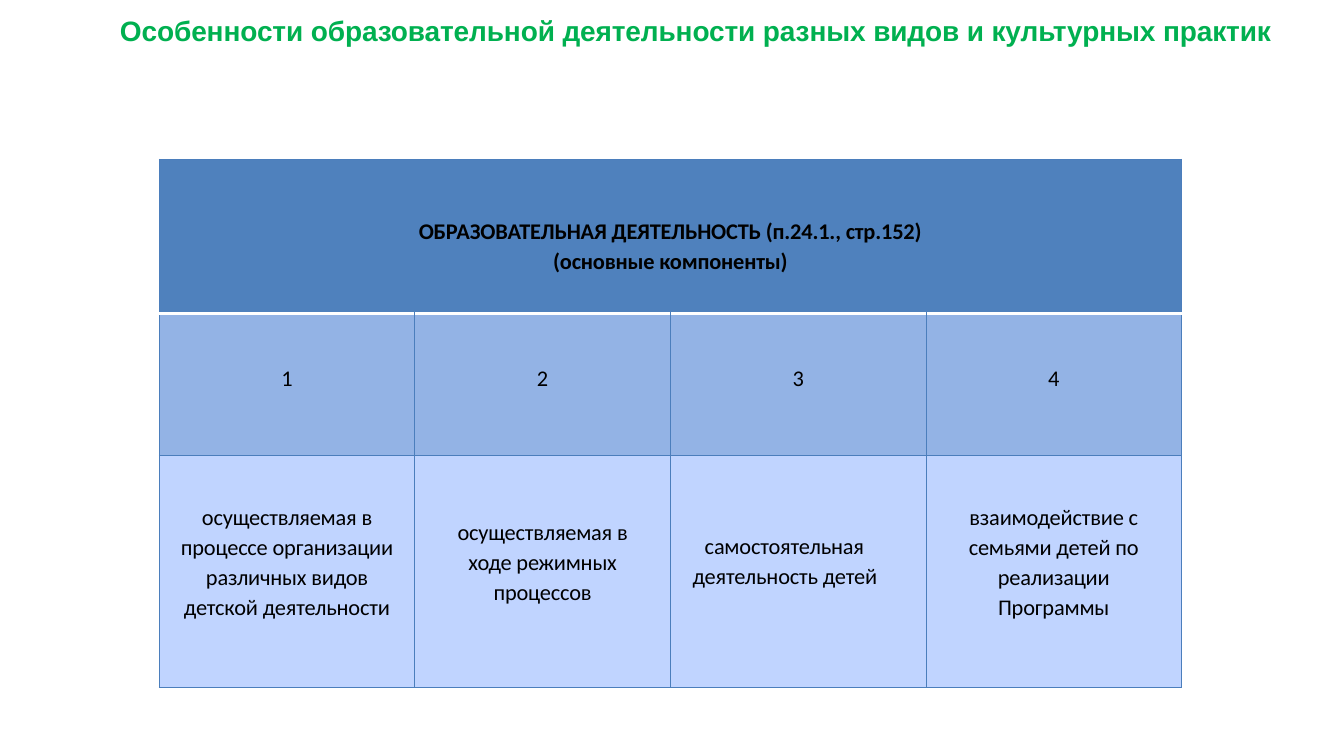
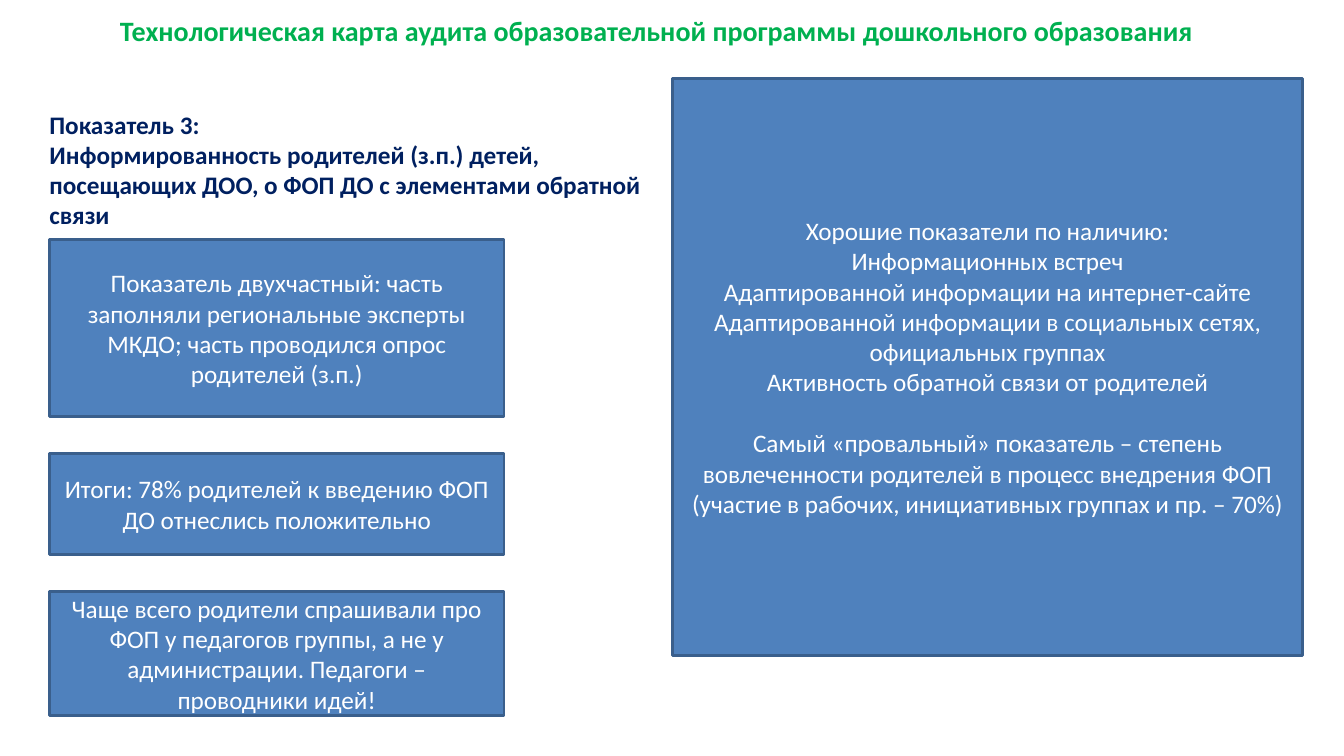
from dataclasses import dataclass

from lxml import etree
from pptx import Presentation
from pptx.dml.color import RGBColor
from pptx.enum.shapes import MSO_SHAPE
from pptx.enum.text import MSO_ANCHOR, MSO_AUTO_SIZE, PP_ALIGN
from pptx.oxml.ns import qn
from pptx.util import Inches, Pt


@dataclass(frozen=True)
class Theme:
    title_green: str = "00B050"
    navy: str = "002060"
    blue: str = "4F81BD"
    middle_blue: str = "93B3E5"
    pale_blue: str = "C0D4FF"
    box_edge: str = "3A5F8C"
    grid: str = "4B7EBC"
    white: str = "FFFFFF"
    black: str = "000000"
    title_size: int = 20
    body_size: int = 18
    table_size: int = 16
    font: str = "Calibri"
    title_font: str = "Arial"


THEME = Theme()
TITLE_ONLY, TITLE_AND_BODY = 5, 1
COMPONENTS = [
    # text, top margin, side margin
    ("осуществляемая в процессе организации различных видов детской деятельности", 0.45, 0.15),
    ("осуществляемая в ходе режимных процессов", 0.6, 0.35),
    ("самостоятельная деятельность детей", 0.74, 0),
    ("взаимодействие с семьями детей по реализации Программы", 0.45, 0.35),
]
LEFT_NOTES = [
    # text, height
    ("Показатель двухчастный: часть заполняли региональные эксперты МКДО; "
     "часть проводился опрос родителей (з.п.)", 1.75),
    ("Итоги: 78% родителей к введению ФОП ДО отнеслись положительно", 1),
    ("Чаще всего родители спрашивали про ФОП у педагогов группы, а не у "
     "администрации. Педагоги – проводники идей!", 1.23),
]
GOOD_RESULTS = [
    "Хорошие показатели по наличию:",
    "Информационных встреч",
    "Адаптированной информации на интернет-сайте",
    "Адаптированной информации в социальных сетях, официальных группах",
    "Активность обратной связи от родителей",
]
WEAK_RESULT = ("Самый «провальный» показатель – степень вовлеченности родителей в "
               "процесс внедрения ФОП (участие в рабочих, инициативных группах и пр. – 70%)")


def write(frame, lines, size, color, bold=False, align=PP_ALIGN.LEFT,
          font=THEME.font, tracking=0):
    """Fill a text frame, one paragraph per line; tracking is in 1/100 pt."""
    frame.word_wrap = True
    for index, line in enumerate(lines):
        paragraph = frame.add_paragraph() if index else frame.paragraphs[0]
        paragraph.alignment = align
        paragraph.space_before = Pt(0)
        run = paragraph.add_run()
        run.text = line
        run.font.size = Pt(size)
        run.font.name = font
        run.font.bold = bold
        run.font.color.rgb = RGBColor.from_string(color)
        if tracking:
            run.font._element.set("spc", str(tracking))


def set_margins(target, left=0, top=0, right=0, bottom=0):
    target.margin_left, target.margin_top = Inches(left), Inches(top)
    target.margin_right, target.margin_bottom = Inches(right), Inches(bottom)


def place(placeholder, left, top, width, height):
    placeholder.left, placeholder.top = Inches(left), Inches(top)
    placeholder.width, placeholder.height = Inches(width), Inches(height)
    frame = placeholder.text_frame
    frame.auto_size = MSO_AUTO_SIZE.NONE
    frame.vertical_anchor = MSO_ANCHOR.TOP
    return frame


def add_titled_slide(deck, layout, title, font=THEME.font, tracking=0):
    slide = deck.slides.add_slide(deck.slide_layouts[layout])
    frame = place(slide.shapes.title, 1.19, 0.11, 11.64, 0.35)
    set_margins(frame, top=0.02)
    write(frame, [title], THEME.title_size, THEME.title_green, True,
          font=font, tracking=tracking)
    return slide


def add_note_box(slide, left, top, width, height, lines):
    box = slide.shapes.add_shape(MSO_SHAPE.RECTANGLE, Inches(left), Inches(top),
                                 Inches(width), Inches(height))
    box.shadow.inherit = False
    box.fill.solid()
    box.fill.fore_color.rgb = RGBColor.from_string(THEME.blue)
    box.line.color.rgb = RGBColor.from_string(THEME.box_edge)
    box.line.width = Pt(2)
    box.text_frame.vertical_anchor = MSO_ANCHOR.MIDDLE
    write(box.text_frame, lines, THEME.body_size, THEME.white, align=PP_ALIGN.CENTER)
    return box


def set_border(cell, side, color, width):
    """Draw one cell edge; side is L, R, T or B."""
    properties = cell._tc.get_or_add_tcPr()
    line = etree.SubElement(properties, qn(f"a:ln{side}"), w=str(Pt(width)))
    fill = etree.SubElement(line, qn("a:solidFill"))
    etree.SubElement(fill, qn("a:srgbClr"), val=color)


def style_cell(cell, row):
    white_edge = {0: "B", 1: "T"}.get(row)
    for side in "LRTB":
        color, width = (THEME.white, 2) if side == white_edge else (THEME.grid, 0.75)
        set_border(cell, side, color, width)
    cell.fill.solid()
    fill = (THEME.blue, THEME.middle_blue, THEME.pale_blue)[row]
    cell.fill.fore_color.rgb = RGBColor.from_string(fill)


def write_cell(cell, lines, top, side=0, bold=False, align=PP_ALIGN.CENTER):
    set_margins(cell, side, top, side)
    write(cell.text_frame, lines, THEME.table_size, THEME.black, bold, align, tracking=-10)


def add_components_table(slide):
    row_heights = (1.53, 1.41, 2.3)
    table = slide.shapes.add_table(len(row_heights), len(COMPONENTS), Inches(1.58),
                                   Inches(1.58), Inches(10.14),
                                   Inches(sum(row_heights))).table
    for row, height in enumerate(row_heights):
        table.rows[row].height = Inches(height)
        for column in range(len(COMPONENTS)):
            style_cell(table.cell(row, column), row)

    header = table.cell(0, 0)
    header.merge(table.cell(0, len(COMPONENTS) - 1))
    write_cell(header, ["ОБРАЗОВАТЕЛЬНАЯ ДЕЯТЕЛЬНОСТЬ (п.24.1., стр.152)",
                        "(основные компоненты)"], 0.58, bold=True)
    header.text_frame.paragraphs[1].space_before = Pt(2)

    for column, (component, top, side) in enumerate(COMPONENTS):
        write_cell(table.cell(1, column), [str(column + 1)], 0.51)
        cell = table.cell(2, column)
        write_cell(cell, [component], top, side,
                   align=PP_ALIGN.CENTER if side else PP_ALIGN.LEFT)
        paragraph = cell.text_frame.paragraphs[0]
        paragraph.line_spacing = 1.1
        if not side:
            set_indent(paragraph, 0.22, 0.12)


def set_indent(paragraph, left, first_line):
    properties = paragraph._p.get_or_add_pPr()
    properties.set("marL", str(Inches(left)))
    properties.set("indent", str(Inches(first_line)))
    return properties


def add_indicator(slide, lines):
    frame = place(slide.placeholders[1], 0.49, 1.08, 6.01, 1.21)
    set_margins(frame)
    write(frame, lines, THEME.body_size, THEME.navy, True)
    for paragraph in frame.paragraphs:
        etree.SubElement(set_indent(paragraph, 0, 0), qn("a:buNone"))


def build_components_slide(deck):
    slide = add_titled_slide(
        deck, TITLE_ONLY,
        "Особенности образовательной деятельности разных видов и культурных практик",
        THEME.title_font, -10)
    add_components_table(slide)


def build_audit_slide(deck):
    slide = add_titled_slide(
        deck, TITLE_AND_BODY,
        "Технологическая карта аудита образовательной программы дошкольного образования")
    add_indicator(slide, [
        "Показатель 3:",
        "Информированность родителей (з.п.) детей, посещающих ДОО, "
        "о ФОП ДО с элементами обратной связи"])
    top, gap = 2.38, 0.37
    for note, height in LEFT_NOTES:
        add_note_box(slide, 0.49, top, 4.51, height, [note])
        top += height + gap
    results = add_note_box(slide, 6.67, 0.78, 6.25, 5.72, GOOD_RESULTS + [WEAK_RESULT])
    results.text_frame.paragraphs[-1].space_before = Pt(22)


def main():
    deck = Presentation()
    deck.slide_width, deck.slide_height = Inches(13.33), Inches(7.5)
    build_components_slide(deck)
    build_audit_slide(deck)
    deck.save("out.pptx")


if __name__ == "__main__":
    main()
